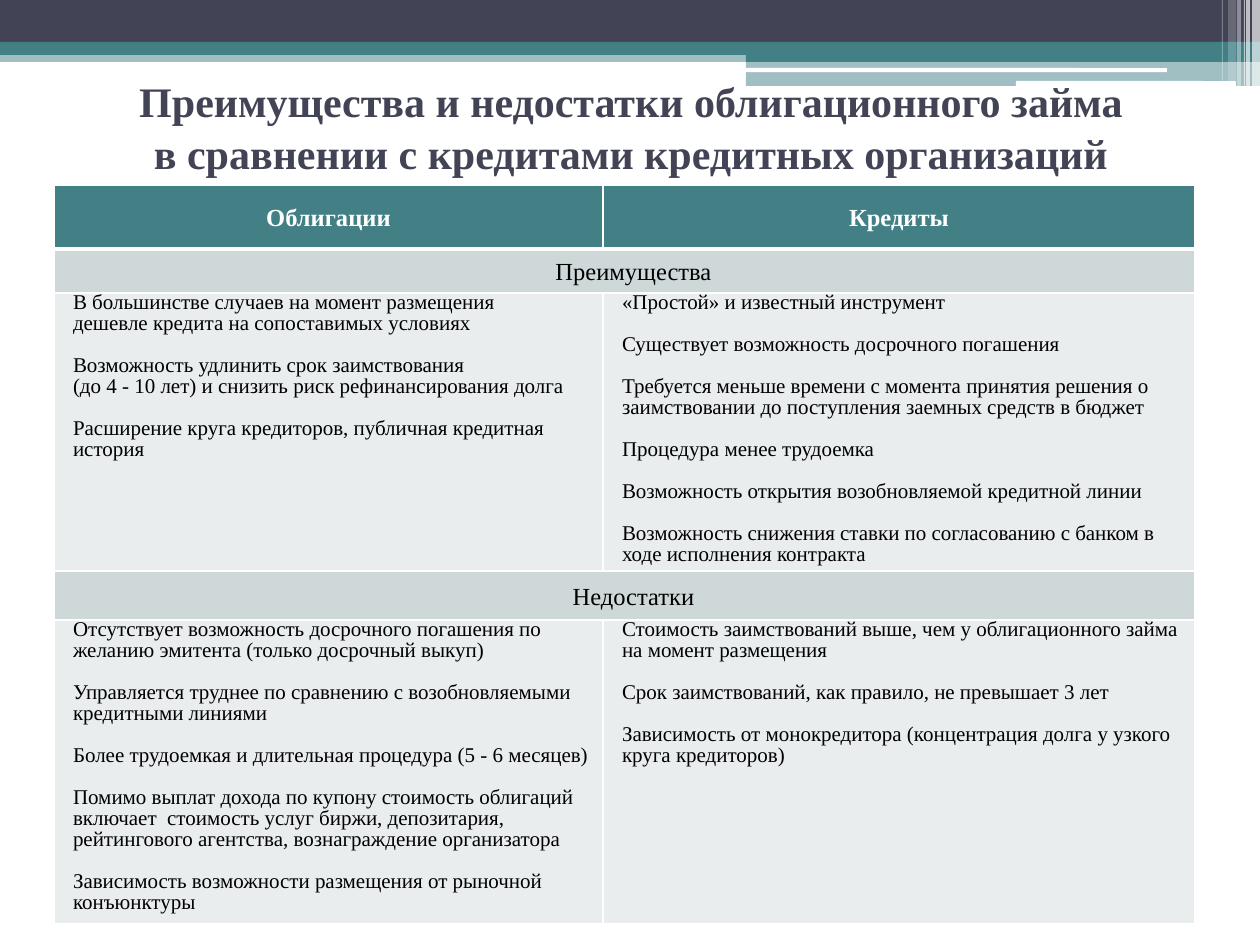
import pptx
import pptx.util
import pptx.dml.color
import pptx.enum.shapes
import pptx.enum.text
import pptx.oxml
import pptx.oxml.ns
import lxml.etree
from dataclasses import dataclass

TITLE = ("Преимущества и недостатки облигационного займа\v"
         "в сравнении с кредитами кредитных организаций")
HEADS = ("Облигации", "Кредиты")
PARTS = [
    ("Преимущества", (
        ["В большинстве случаев на момент размещения\v"
         "дешевле кредита на сопоставимых условиях",
         "Возможность удлинить срок заимствования\v"
         "(до 4 - 10 лет) и снизить риск рефинансирования долга",
         "Расширение круга кредиторов, публичная кредитная история"],
        ["«Простой» и известный инструмент",
         "Существует возможность досрочного погашения",
         "Требуется меньше времени с момента принятия решения о "
         "заимствовании до поступления заемных средств в бюджет",
         "Процедура менее трудоемка",
         "Возможность открытия возобновляемой кредитной линии",
         "Возможность снижения ставки по согласованию с банком в "
         "ходе исполнения контракта"])),
    ("Недостатки", (
        ["Отсутствует возможность досрочного погашения по желанию "
         "эмитента (только досрочный выкуп)",
         "Управляется труднее по сравнению с возобновляемыми "
         "кредитными линиями",
         "Более трудоемкая и длительная процедура (5 - 6 месяцев)",
         "Помимо выплат дохода по купону стоимость облигаций "
         "включает  стоимость услуг биржи, депозитария, "
         "рейтингового агентства, вознаграждение организатора",
         "Зависимость возможности размещения от рыночной конъюнктуры"],
        ["Стоимость заимствований выше, чем у облигационного займа "
         "на момент размещения",
         "Срок заимствований, как правило, не превышает 3 лет",
         "Зависимость от монокредитора (концентрация долга у узкого "
         "круга кредиторов)"])),
]


@dataclass
class Theme:
    font: str = "Times New Roman"
    dark: str = "424456"
    teal: str = "438086"
    white: str = "FFFFFF"
    black: str = "000000"
    band: str = "CFD8D9"
    pale: str = "E9EDED"
    title: int = 24
    head: int = 14
    body: int = 12


T = Theme()
KIND = pptx.enum.shapes.MSO_SHAPE
ALIGN = pptx.enum.text.PP_ALIGN
ANCHOR = pptx.enum.text.MSO_ANCHOR
Pt = pptx.util.Pt

BARS = [
    (0, 50, 1260, 12, T.teal, 50),
    (0, 0, 1260, 43, T.dark, 100),
    (0, 42, 1260, 13, T.teal, 100),
    (746, 49, 514, 13, T.teal, 100),
    (746, 61, 514, 25, T.teal, 50),
]
PILLS = [
    (745, 68, 422, 4, T.white, 100),
    (1016, 81, 220, 5, T.white, 100),
]
STRIPES = [
    (1252, 8, 86, 65), (1246, 4, 86, 65), (1244, 1, 86, 60),
    (1237, 4, 86, 40), (1228, 8, 81, 20), (1222, 1, 81, 30),
]
COLS = (549, 592)
ROWS = (64, 44, 278, 49, 304)


def px(n):
    return round(n * 914400 / 126)


def rgb(code):
    return pptx.dml.color.RGBColor.from_string(code)


def bar(slide, kind, x, y, w, h, color, alpha):
    shape = slide.shapes.add_shape(kind, px(x), px(y), px(w), px(h))
    shape.shadow.inherit = False
    shape.line.fill.background()
    shape.fill.solid()
    shape.fill.fore_color.rgb = rgb(color)
    if alpha < 100:
        tint = shape.element.xpath("./p:spPr/a:solidFill/a:srgbClr")[0]
        node = lxml.etree.SubElement(tint, pptx.oxml.ns.qn("a:alpha"))
        node.set("val", str(alpha * 1000))


def style(frame, size, color, bold, align, lead, gap=0):
    for i, para in enumerate(frame.paragraphs):
        para.alignment = align
        para.line_spacing = Pt(lead)
        para.space_before = Pt(gap if i else 0)
        para.space_after = Pt(0)
        for run in para.runs:
            font = run.font
            font.name, font.size, font.bold = T.font, Pt(size), bold
            font.color.rgb = rgb(color)


def edge(cell, top, base):
    props = cell._tc.get_or_add_tcPr()
    for side, wide in zip("LRTB", (1, 1, top, base)):
        props.append(pptx.oxml.parse_xml(
            f'<a:ln{side} {pptx.oxml.ns.nsdecls("a")} w="{Pt(wide)}">'
            f'<a:solidFill><a:srgbClr val="{T.white}"/></a:solidFill>'
            f'</a:ln{side}>'))


def paint(cell, fill, left, anchor, top=1, base=1):
    edge(cell, top, base)
    cell.fill.solid()
    cell.fill.fore_color.rgb = rgb(fill)
    cell.margin_left, cell.margin_right = px(left), px(1)
    cell.margin_top = cell.margin_bottom = 0
    cell.vertical_anchor = anchor


def grid(slide):
    frame = slide.shapes.add_table(len(ROWS), len(COLS), px(54), px(185),
                                   px(sum(COLS)), px(sum(ROWS)))
    table = frame.table
    table.horz_banding = False
    for col, wide in zip(table.columns, COLS):
        col.width = px(wide)
    for row, high in zip(table.rows, ROWS):
        row.height = px(high)

    for c, text in enumerate(HEADS):
        cell = table.cell(0, c)
        paint(cell, T.teal, 1, ANCHOR.MIDDLE, base=3)
        cell.text_frame.text = text
        style(cell.text_frame, T.head, T.white, True, ALIGN.CENTER, 17)

    for i, (name, lists) in enumerate(PARTS):
        r = 1 + 2 * i
        for c, items in enumerate(lists):
            paint(table.cell(r, c), T.band, 19, ANCHOR.MIDDLE,
                  top=1 if i else 3)
            cell = table.cell(r + 1, c)
            paint(cell, T.pale, 19, ANCHOR.TOP)
            cell.text_frame.text = "\n".join(items)
            style(cell.text_frame, T.body, T.black, False, ALIGN.LEFT,
                  12, gap=12)
        cell = table.cell(r, 0)
        cell.merge(table.cell(r, 1))
        cell.text_frame.text = name
        style(cell.text_frame, T.head, T.black, False, ALIGN.CENTER, 17)


def main():
    deck = pptx.Presentation()
    deck.slide_width, deck.slide_height = px(1260), px(945)
    slide = deck.slides.add_slide(deck.slide_layouts[5])
    for item in BARS:
        bar(slide, KIND.RECTANGLE, *item)
    for item in PILLS:
        bar(slide, KIND.ROUNDED_RECTANGLE, *item)
    for x, w, h, alpha in STRIPES:
        bar(slide, KIND.RECTANGLE, x, 0, w, h, T.white, alpha)

    title = slide.shapes.title
    title.left, title.top = px(64), px(96)
    title.width, title.height = px(1134), px(59)
    frame = title.text_frame
    frame.text = TITLE
    frame.word_wrap = True
    frame.auto_size = pptx.enum.text.MSO_AUTO_SIZE.NONE
    frame.vertical_anchor = ANCHOR.MIDDLE
    style(frame, T.title, T.dark, True, ALIGN.CENTER, 30)
    slide.shapes.element.append(title.element)

    grid(slide)
    deck.save("out.pptx")


if __name__ == "__main__":
    main()
